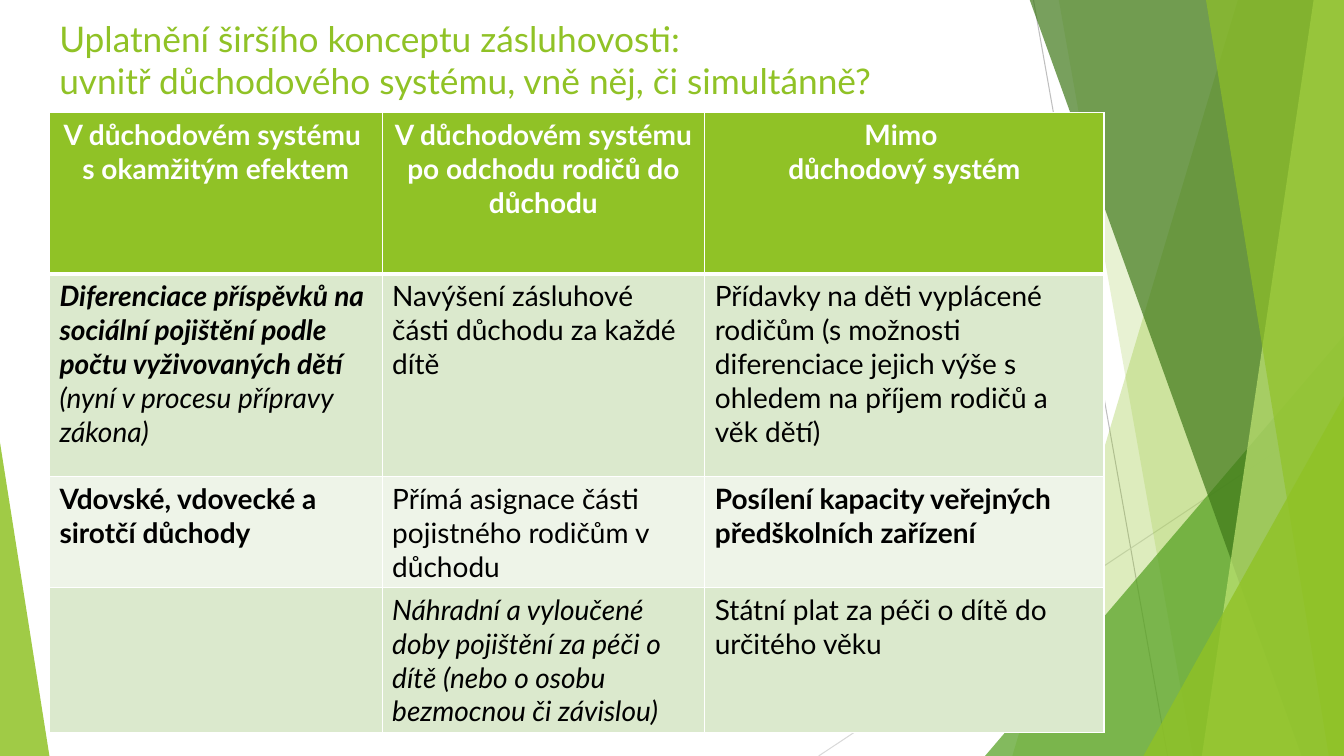
from lxml import etree
from pptx import Presentation
from pptx import util as u
from pptx.dml.color import RGBColor
from pptx.enum import shapes, text
from pptx.oxml.ns import qn

COLORS = {
    "green": "90C226", "leaf": "54A021", "forest": "3F7819", "lime": "C0E474",
    "band_dark": "DBE9CD", "band_light": "EEF4E8", "white": "FFFFFF",
    "black": "000000", "line": "BFBFBF", "line_light": "D9D9D9",
}
FONT = "Lato"
WIDTH, HEIGHT = 13.33, 7.5

TITLE = ("Uplatnění širšího konceptu zásluhovosti: \v"
         "uvnitř důchodového systému, vně něj, či simultánně?")
COLUMN_WIDTHS = [3.3, 3.2, 3.96]
ROW_HEIGHTS = [1.6, 2.01, 1.1, 1.44]
ROW_FILLS = ["green", "band_dark", "band_light", "band_dark"]
ROWS = [
    [[("V důchodovém systému ", "b"), ("s okamžitým efektem", "b")],
     [("V důchodovém systému ", "b"), ("po odchodu rodičů do důchodu", "b")],
     [("Mimo ", "b"), ("důchodový systém", "b")]],
    [[("Diferenciace příspěvků na sociální pojištění podle počtu "
       "vyživovaných dětí", "bi"),
      ("(nyní v procesu přípravy zákona)", "i")],
     [("Navýšení zásluhové části důchodu za každé dítě", "")],
     [("Přídavky na děti vyplácené rodičům (s možnosti diferenciace jejich "
       "výše s ohledem na příjem rodičů a věk dětí)", "")]],
    [[("Vdovské, vdovecké a sirotčí důchody", "b")],
     [("Přímá asignace části pojistného rodičům v důchodu", "")],
     [("Posílení kapacity veřejných předškolních zařízení", "b")]],
    [[],
     [("Náhradní a vyloučené doby pojištění za péči o dítě (nebo o osobu "
       "bezmocnou či závislou)", "i")],
     [("Státní plat za péči o dítě do určitého věku", "")]],
]


def rgb(name):
    """Return the named colour."""
    return RGBColor.from_string(COLORS[name])


def style_font(font, size, color, style=""):
    """Set typeface, size, colour and the bold and italic flags."""
    font.name, font.size = FONT, u.Pt(size)
    font.color.rgb = rgb(color)
    font.bold, font.italic = "b" in style, "i" in style


def fill_translucent(shape, color, opacity):
    """Fill a borderless shape with a colour at an opacity in percent."""
    shape.shadow.inherit = False
    shape.line.fill.background()
    shape.fill.solid()
    shape.fill.fore_color.rgb = rgb(color)
    color_element = shape.fill._xPr.find(qn("a:solidFill"))[0]
    etree.SubElement(color_element, qn("a:alpha"), val=str(opacity * 1000))


def add_thin_line(slide, start, end, color):
    """Draw a thin straight line between two points."""
    line = slide.shapes.add_connector(
        shapes.MSO_CONNECTOR.STRAIGHT, *map(u.Inches, start + end))
    line.line.color.rgb = rgb(color)
    line.line.width = u.Pt(0.75)
    etree.SubElement(line._element.spPr, qn("a:effectLst"))


def add_shard(slide, top_left, bottom_left, color, opacity):
    """Draw a slanted shard reaching from its left edge to the slide's right."""
    top = -0.01
    corners = [(top_left, top), (WIDTH, top), (WIDTH, HEIGHT), (bottom_left, HEIGHT)]
    points = [(u.Inches(x), u.Inches(y)) for x, y in corners]
    builder = slide.shapes.build_freeform(*points[0])
    builder.add_line_segments(points[1:], close=True)
    fill_translucent(builder.convert_to_shape(), color, opacity)


def add_corner(slide, left, top, width, apex, color, opacity):
    """Draw a triangle standing on the slide's bottom edge."""
    shape = slide.shapes.add_shape(
        shapes.MSO_SHAPE.ISOSCELES_TRIANGLE,
        *map(u.Inches, (left, top, width, HEIGHT - top)))
    shape.adjustments[0] = apex
    fill_translucent(shape, color, opacity)


def add_backdrop(slide):
    """Draw the green facets behind the content."""
    add_thin_line(slide, (10.25, 0), (11.58, HEIGHT), "line")
    add_thin_line(slide, (WIDTH, 4.03), (8.12, HEIGHT), "line_light")
    add_shard(slide, 12.28, 10.04, "green", 30)
    add_shard(slide, 10.5, 11.83, "green", 20)
    add_corner(slide, 9.77, 3.33, 3.56, 1, "leaf", 72)
    add_shard(slide, 10.21, 12.91, "forest", 70)
    add_shard(slide, 13.03, 11.92, "lime", 70)
    add_shard(slide, 11.96, 13.18, "green", 65)
    add_corner(slide, 11.34, 3.93, 1.99, 1, "green", 80)
    add_corner(slide, 0, 4.39, 0.49, 0, "green", 85)


def add_title(slide, left, top, width, height):
    """Place the two-line heading."""
    box = slide.shapes.add_textbox(*map(u.Inches, (left, top, width, height)))
    box.text_frame.word_wrap = True
    box.text_frame.vertical_anchor = text.MSO_ANCHOR.TOP
    paragraph = box.text_frame.paragraphs[0]
    paragraph.text = TITLE
    style_font(paragraph.font, 25.2, "green")


def set_borders(cell, bottom):
    """Give a cell white borders, the bottom one of its own width in points."""
    properties = cell._tc.get_or_add_tcPr()
    widths = {"lnL": 1, "lnR": 1, "lnT": 1, "lnB": bottom}
    for position, (side, width) in enumerate(widths.items()):
        border = etree.Element(qn(f"a:{side}"), w=str(u.Pt(width)))
        fill = etree.SubElement(border, qn("a:solidFill"))
        etree.SubElement(fill, qn("a:srgbClr"), val=COLORS["white"])
        properties.insert(position, border)


def fill_cell(cell, paragraphs, fill, is_header):
    """Write and colour one table cell."""
    cell.fill.solid()
    cell.fill.fore_color.rgb = rgb(fill)
    set_borders(cell, 3 if is_header else 1)
    frame = cell.text_frame
    for index, (words, style) in enumerate(paragraphs):
        paragraph = frame.add_paragraph() if index else frame.paragraphs[0]
        paragraph.text = words
        paragraph.alignment = text.PP_ALIGN.CENTER if is_header else text.PP_ALIGN.LEFT
        style_font(paragraph.font, 20, "white" if is_header else "black", style)


def add_measures_table(slide, left, top):
    """Place the table of measures inside and outside the pension system."""
    table = slide.shapes.add_table(
        len(ROWS), len(COLUMN_WIDTHS), u.Inches(left), u.Inches(top),
        u.Inches(sum(COLUMN_WIDTHS)), u.Inches(sum(ROW_HEIGHTS))).table
    for column, width in zip(table.columns, COLUMN_WIDTHS):
        column.width = u.Inches(width)
    for index, (row, height) in enumerate(zip(table.rows, ROW_HEIGHTS)):
        row.height = u.Inches(height)
        for cell, paragraphs in zip(row.cells, ROWS[index]):
            fill_cell(cell, paragraphs, ROW_FILLS[index], index == 0)


def main():
    """Build the slide and save it."""
    presentation = Presentation()
    presentation.slide_width = u.Inches(WIDTH)
    presentation.slide_height = u.Inches(HEIGHT)
    slide = presentation.slides.add_slide(presentation.slide_layouts[6])
    add_backdrop(slide)
    add_title(slide, 0.49, 0.12, 12.73, 0.54)
    add_measures_table(slide, 0.49, 1.12)
    presentation.save("out.pptx")


if __name__ == "__main__":
    main()
